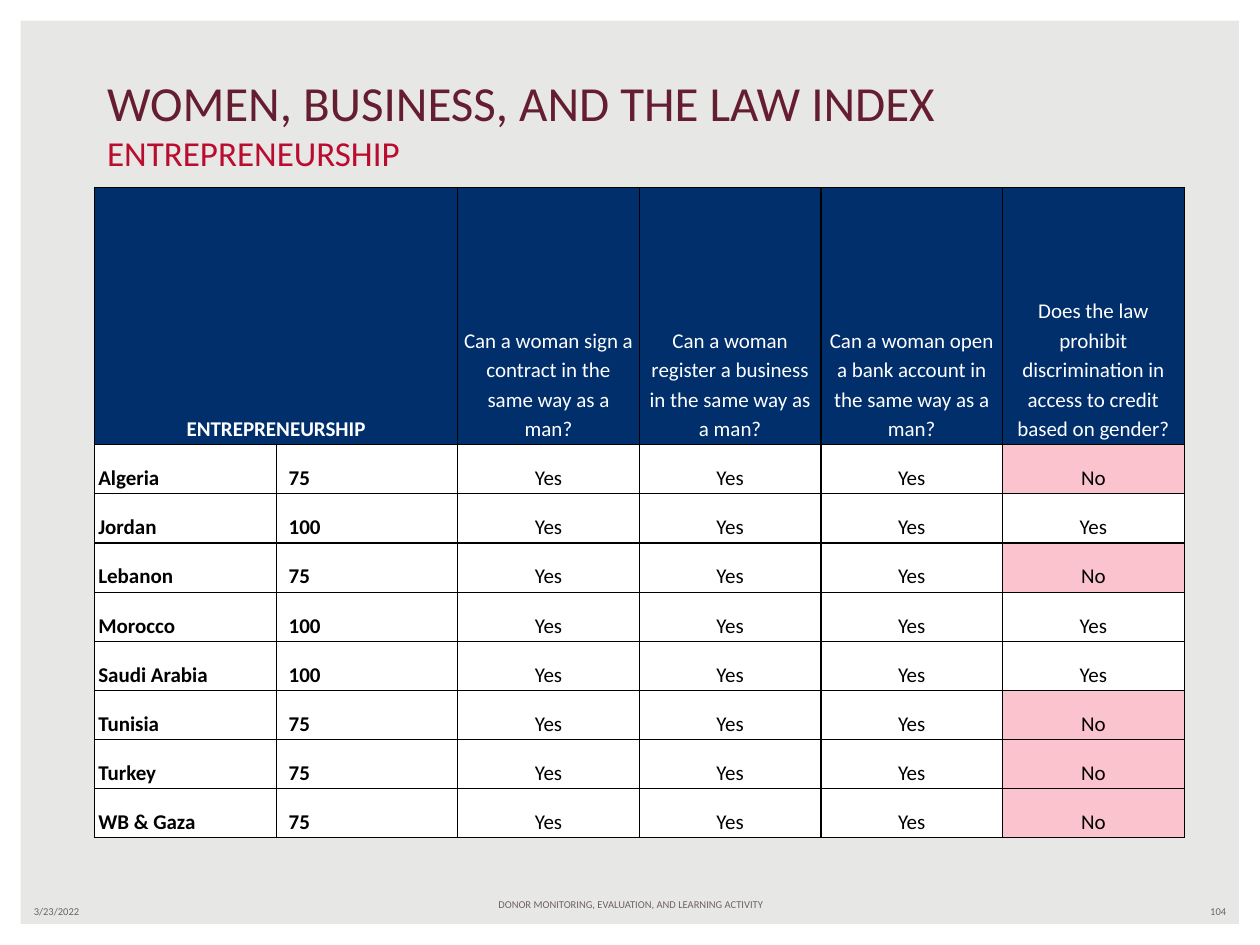
"""Build the Entrepreneurship slide of the Women, Business, and the Law index."""
from lxml import etree
from pptx import Presentation
from pptx.dml.color import RGBColor
from pptx.enum.shapes import MSO_SHAPE
from pptx.enum.text import MSO_ANCHOR, MSO_AUTO_SIZE, PP_ALIGN
from pptx.oxml.ns import qn
from pptx.util import Inches, Pt

LEFT, CENTER, RIGHT = PP_ALIGN.LEFT, PP_ALIGN.CENTER, PP_ALIGN.RIGHT
TOP, MIDDLE, BOTTOM = MSO_ANCHOR.TOP, MSO_ANCHOR.MIDDLE, MSO_ANCHOR.BOTTOM
FRAME, NO_FIT = MSO_SHAPE.FRAME, MSO_AUTO_SIZE.NONE

FONT = "Calibri"
BACKGROUND, WHITE, BLACK = "E7E7E5", "FFFFFF", "000000"
NAVY, PINK, GRAY = "002F6C", "FBC3CE", "6C6463"

TITLE = [
    ("WOMEN, BUSINESS, AND THE LAW INDEX", 28, "651D32"),
    ("ENTREPRENEURSHIP", 20, "BA0C2F"),
]
FOOTERS = [
    ("DONOR MONITORING, EVALUATION, AND LEARNING ACTIVITY",
     (3.42, 7.08, 3.17, 0.3), CENTER, TOP),
    ("104", (7.5, 7.13, 2.33, 0.2), RIGHT, MIDDLE),
    ("3/23/2022", (0.17, 7.13, 2.33, 0.2), LEFT, MIDDLE),
]
HEADER = [
    "ENTREPRENEURSHIP",
    "",
    "Can a woman sign a contract in the same way as a man?",
    "Can a woman register a business in the same way as a man?",
    "Can a woman open a bank account in the same way as a man?",
    "Does the law prohibit discrimination in access to credit based on gender?",
]
COUNTRIES = [
    ("Algeria", "75", "Yes", "Yes", "Yes", "No"),
    ("Jordan", "100", "Yes", "Yes", "Yes", "Yes"),
    ("Lebanon", "75", "Yes", "Yes", "Yes", "No"),
    ("Morocco", "100", "Yes", "Yes", "Yes", "Yes"),
    ("Saudi Arabia", "100", "Yes", "Yes", "Yes", "Yes"),
    ("Tunisia", "75", "Yes", "Yes", "Yes", "No"),
    ("Turkey", "75", "Yes", "Yes", "Yes", "No"),
    ("WB & Gaza", "75", "Yes", "Yes", "Yes", "No"),
]
TABLE_LEFT, TABLE_TOP, TABLE_WIDTH = 0.75, 1.49, 8.65
HEADER_HEIGHT, ROW_HEIGHT = 2.04, 0.39


def rgb(value):
    return RGBColor.from_string(value)


def box(*lengths):
    return [Inches(n) for n in lengths]


def paint(fill, color):
    fill.solid()
    fill.fore_color.rgb = rgb(color)


def add_run(p, text, size, color, bold=False):
    r = p.add_run()
    r.text = text
    r.font.name, r.font.size, r.font.bold = FONT, Pt(size), bold
    r.font.color.rgb = rgb(color)


def set_borders(cell):
    tcPr = cell._tc.get_or_add_tcPr()
    for i, side in enumerate(("lnL", "lnR", "lnT", "lnB")):
        ln = etree.Element(qn(f"a:{side}"), w=str(Pt(0.75)))
        fill = etree.SubElement(ln, qn("a:solidFill"))
        etree.SubElement(fill, qn("a:srgbClr"), val=BLACK)
        tcPr.insert(i, ln)


def add_frame(s):
    sp = s.shapes.add_shape(FRAME, *box(0, 0, 10, 7.5))
    sp.adjustments[0] = 0.022
    sp.shadow.inherit = False
    paint(sp.fill, WHITE)
    sp.line.fill.background()


def add_title(s):
    sp = s.shapes.title
    sp.left, sp.top, sp.width, sp.height = box(0.75, 0.52, 8.5, 0.91)
    tf = sp.text_frame
    tf.auto_size, tf.vertical_anchor = NO_FIT, BOTTOM
    p = tf.paragraphs[0]
    p.alignment = LEFT
    for i, (text, size, color) in enumerate(TITLE):
        if i:
            p.add_line_break()
        add_run(p, text, size, color)


def add_footer(s, text, place, align, anchor):
    tf = s.shapes.add_textbox(*box(*place)).text_frame
    tf.word_wrap, tf.vertical_anchor = True, anchor
    p = tf.paragraphs[0]
    p.alignment = align
    add_run(p, text, 6, GRAY)


def fill_cell(cell, text, row, col):
    header = row == 0
    cell.vertical_anchor = BOTTOM
    cell.margin_left = cell.margin_right = Inches(0.1 if col == 1 else 0.03)
    cell.margin_top = cell.margin_bottom = Inches(0.02)
    paint(cell.fill, NAVY if header else PINK if text == "No" else WHITE)
    set_borders(cell)
    if text:
        p = cell.text_frame.paragraphs[0]
        p.alignment = CENTER if header or col > 1 else LEFT
        p.line_spacing = 1.15
        add_run(p, text, 12, WHITE if header else BLACK, bold=col < 2)


def add_index_table(s):
    rows = [HEADER, *COUNTRIES]
    height = HEADER_HEIGHT + ROW_HEIGHT * len(COUNTRIES)
    table = s.shapes.add_table(
        len(rows), len(HEADER), *box(TABLE_LEFT, TABLE_TOP, TABLE_WIDTH, height)).table
    for column in table.columns:
        column.width = Inches(TABLE_WIDTH / len(HEADER))
    for i, values in enumerate(rows):
        table.rows[i].height = Inches(ROW_HEIGHT if i else HEADER_HEIGHT)
        for j, text in enumerate(values):
            fill_cell(table.cell(i, j), text, i, j)
    table.cell(0, 0).merge(table.cell(0, 1))


def main():
    prs = Presentation()
    prs.slide_width, prs.slide_height = box(10, 7.5)
    s = prs.slides.add_slide(prs.slide_layouts[5])
    paint(s.background.fill, BACKGROUND)
    add_frame(s)
    add_title(s)
    add_index_table(s)
    for footer in FOOTERS:
        add_footer(s, *footer)
    prs.save("out.pptx")


if __name__ == "__main__":
    main()
